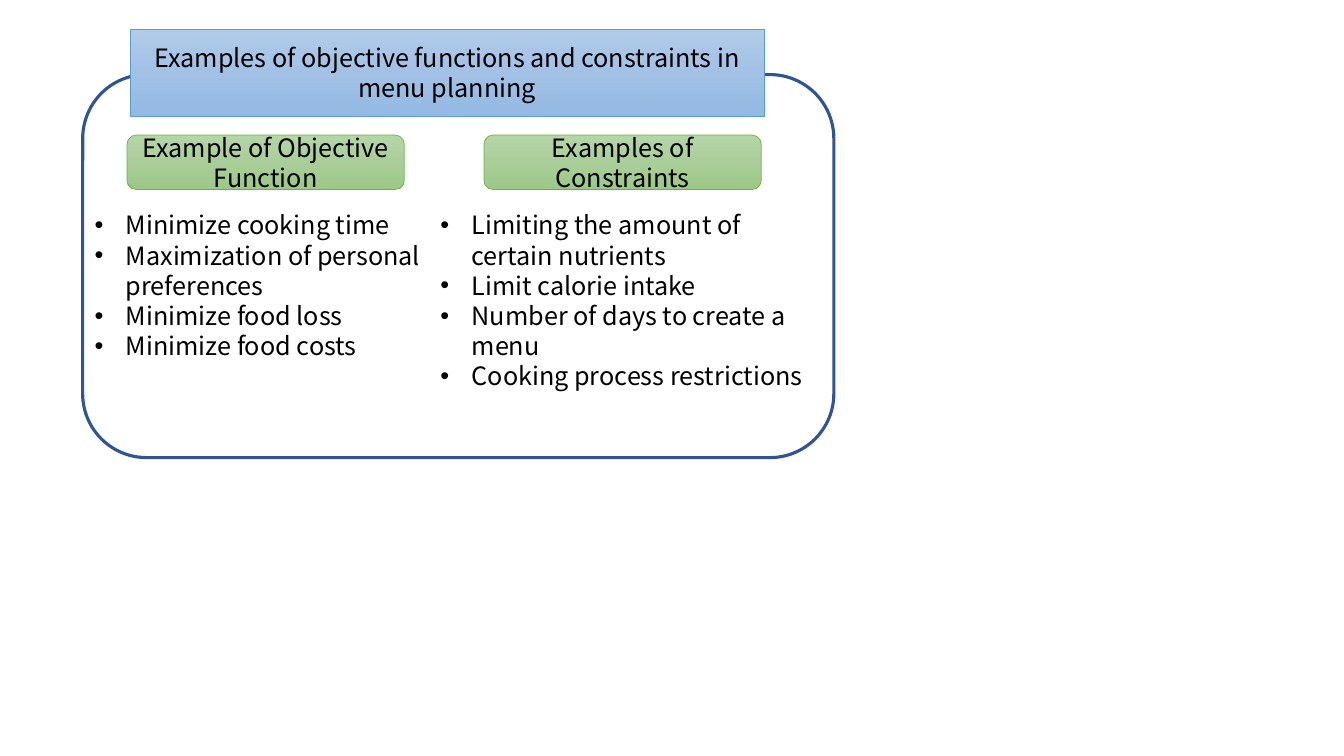
"""Build a slide on objective functions and constraints in menu planning."""
from copy import deepcopy
from dataclasses import dataclass

from lxml.etree import SubElement
from pptx import Presentation
from pptx.dml.color import RGBColor
from pptx.enum.shapes import MSO_SHAPE
from pptx.enum.text import MSO_ANCHOR, MSO_AUTO_SIZE, PP_ALIGN
from pptx.oxml.ns import qn
from pptx.shapes.autoshape import Shape
from pptx.slide import Slide
from pptx.util import Inches, Pt


@dataclass(frozen=True)
class Theme:
    font: str = "Noto Sans CJK JP"
    size: float = 18
    text: str = "000000"
    panel: str = "FFFFFF"
    panel_line: str = "2F5597"
    blue: tuple[str, ...] = ("B1CBE9", "A3C1E5", "93B9E4")
    blue_line: str = "5B9BD5"
    green: tuple[str, ...] = ("B5D5A7", "AACE9A", "9CC987")
    green_line: str = "70AD47"


@dataclass(frozen=True)
class Box:
    left: float
    top: float
    width: float
    height: float

    def emu(self) -> tuple[int, ...]:
        return tuple(Inches(v) for v in (self.left, self.top, self.width, self.height))


@dataclass(frozen=True)
class Column:
    heading: str
    heading_box: Box
    items: tuple[str, ...]
    items_box: Box


THEME = Theme()
INDENT = Inches(0.31)
TITLE = "Examples of objective functions and constraints in menu planning"
TITLE_BOX = Box(1.29, 0.29, 6.29, 0.86)
PANEL_BOX = Box(0.82, 0.74, 7.45, 3.8)
COLUMNS = (
    Column(
        "Example of Objective Function",
        Box(1.26, 1.34, 2.75, 0.54),
        (
            "Minimize cooking time",
            "Maximization of personal preferences",
            "Minimize food loss",
            "Minimize food costs",
        ),
        Box(0.84, 2.03, 3.6, 1.62),
    ),
    Column(
        "Examples of Constraints",
        Box(4.8, 1.34, 2.75, 0.54),
        (
            "Limiting the amount of certain nutrients",
            "Limit calorie intake",
            "Number of days to create a menu",
            "Cooking process restrictions",
        ),
        Box(4.27, 2.03, 3.81, 1.92),
    ),
)


def set_line(sp: Shape, color: str, width: float) -> None:
    sp.line.color.rgb = RGBColor.from_string(color)
    sp.line.width = Pt(width)


def set_gradient(sp: Shape, colors: tuple[str, ...]) -> None:
    sp.fill.gradient()
    sp.fill.gradient_angle = 270
    first = sp._element.spPr.find(".//" + qn("a:gs"))
    first.addnext(deepcopy(first))
    for i, (stop, color) in enumerate(zip(sp.fill.gradient_stops, colors)):
        stop.position = i / (len(colors) - 1)
        stop.color.rgb = RGBColor.from_string(color)


def set_font(p) -> None:
    for r in p.runs:
        for name, value in {"name": THEME.font, "size": Pt(THEME.size)}.items():
            setattr(r.font, name, value)
        r.font.color.rgb = RGBColor.from_string(THEME.text)


def format_label(sp: Shape, text: str, fill: tuple[str, ...], line: str) -> None:
    set_gradient(sp, fill)
    set_line(sp, line, 0.5)
    tf = sp.text_frame
    tf.text = text
    layout = {
        "word_wrap": True,
        "auto_size": MSO_AUTO_SIZE.NONE,
        "vertical_anchor": MSO_ANCHOR.MIDDLE,
    }
    for name, value in layout.items():
        setattr(tf, name, value)
    p = tf.paragraphs[0]
    p.alignment = PP_ALIGN.CENTER
    set_font(p)


def add_round_box(s: Slide, box: Box) -> Shape:
    sp = s.shapes.add_shape(MSO_SHAPE.ROUNDED_RECTANGLE, *box.emu())
    sp.shadow.inherit = False
    return sp


def add_panel(s: Slide) -> None:
    sp = add_round_box(s, PANEL_BOX)
    sp.fill.solid()
    sp.fill.fore_color.rgb = RGBColor.from_string(THEME.panel)
    set_line(sp, THEME.panel_line, 2.25)


def add_title(s: Slide) -> None:
    sp = s.shapes.title
    sp.left, sp.top, sp.width, sp.height = TITLE_BOX.emu()
    geom = SubElement(sp._element.spPr, qn("a:prstGeom"), prst="roundRect")
    SubElement(geom, qn("a:avLst"))
    format_label(sp, TITLE, THEME.blue, THEME.blue_line)
    s.shapes._spTree.append(sp._element)


def add_bullets(s: Slide, items: tuple[str, ...], box: Box) -> None:
    tf = s.shapes.add_textbox(*box.emu()).text_frame
    tf.word_wrap = True
    tf.auto_size = MSO_AUTO_SIZE.SHAPE_TO_FIT_TEXT
    tf.text = "\n".join(items)
    for p in tf.paragraphs:
        pPr = p._p.get_or_add_pPr()
        pPr.set("marL", str(INDENT))
        pPr.set("indent", str(-INDENT))
        SubElement(pPr, qn("a:buFont"), typeface="Arial")
        SubElement(pPr, qn("a:buChar"), char="•")
        set_font(p)


def main() -> None:
    prs = Presentation()
    prs.slide_width, prs.slide_height = Inches(13.33), Inches(7.5)
    s = prs.slides.add_slide(prs.slide_layouts[5])
    add_panel(s)
    add_title(s)
    for column in COLUMNS:
        sp = add_round_box(s, column.heading_box)
        format_label(sp, column.heading, THEME.green, THEME.green_line)
    for column in COLUMNS:
        add_bullets(s, column.items, column.items_box)
    prs.save("out.pptx")


if __name__ == "__main__":
    main()
